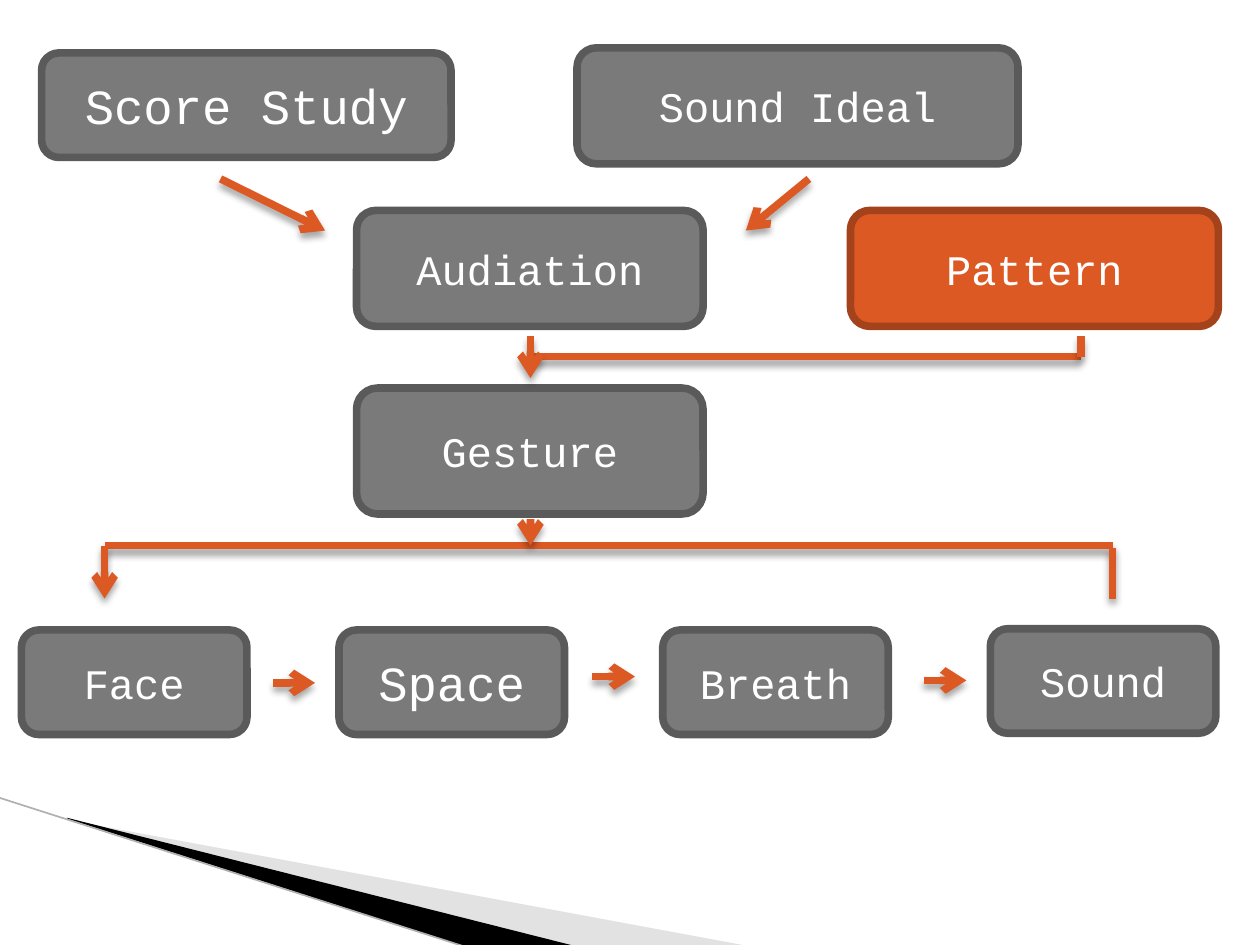
from lxml import etree
from pptx import Presentation
from pptx.dml.color import RGBColor
from pptx.enum.shapes import MSO_CONNECTOR as Link, MSO_SHAPE as Shape
from pptx.enum.text import MSO_ANCHOR as Anchor, PP_ALIGN as Align
from pptx.oxml import parse_xml
from pptx.oxml.ns import nsdecls, qn
from pptx.util import Inches, Pt

GRAY = RGBColor(0x7A, 0x7A, 0x7A)
EDGE = RGBColor(0x5A, 0x5A, 0x5A)
ORANGE = RGBColor(0xDC, 0x59, 0x24)
RUST = RGBColor(0xA3, 0x42, 0x1B)
SILVER = RGBColor(0xB8, 0xB8, 0xB8)
PALE = RGBColor(0xB0, 0xB0, 0xB0)
BLACK = RGBColor(0, 0, 0)
WHITE = RGBColor(0xFF, 0xFF, 0xFF)
FONT = "Courier New"
STROKE = 4.33

# Boxes: text, left, top, width, height, text size
BOXES = [
    ("Score Study", 0.33, 0.42, 3.25, 0.83, 28),
    ("Sound Ideal", 4.58, 0.38, 3.5, 0.92, 24),
    ("Audiation", 2.83, 1.67, 2.75, 0.92, 24),
    ("Pattern", 6.75, 1.67, 2.92, 0.92, 24),
    ("Gesture", 2.83, 3.08, 2.75, 1, 24),
    ("Face", 0.17, 5, 1.79, 0.83, 24),
    ("Space", 2.69, 5, 1.79, 0.83, 28),
    ("Breath", 5.26, 5, 1.79, 0.83, 24),
    ("Sound", 7.86, 4.99, 1.79, 0.83, 24),
]
ACCENT = "Pattern"

# Links: start, end, arrowhead
MID, LEFT, RIGHT, BAR = 4.21, 0.83, 8.83, 4.33
LINKS = [
    ((1.75, 1.42), (2.58, 1.83), True),
    ((6.42, 1.42), (5.92, 1.83), True),
    ((LEFT, BAR), (RIGHT, BAR), False),
    ((LEFT, BAR), (LEFT, 4.75), True),
    ((RIGHT, 4.35), (RIGHT, 4.75), False),
    ((MID, 4.17), (MID, BAR), True),
    ((MID, 2.83), (8.58, 2.83), False),
    ((8.58, 2.83), (8.58, 2.67), False),
    ((MID, 2.67), (MID, 3), True),
    ((2.17, 5.42), (2.5, 5.42), True),
    ((4.7, 5.37), (5.04, 5.37), True),
    ((7.33, 5.4), (7.67, 5.4), True),
]

# Corner wedges: points, colour, opacity in percent
WEDGES = [
    ([(0.55, 6.51), (5.95, 7.51), (4.56, 7.51), (0.55, 6.5)], SILVER, 40),
    ([(0.53, 6.49), (4.57, 7.51), (3.72, 7.52), (0.54, 6.5)], BLACK, 100),
]

SHADOW = (
    f'<a:effectLst {nsdecls("a")}>'
    f'<a:outerShdw blurRad="{Pt(4)}" dist="{Pt(3)}" dir="5400000" rotWithShape="0">'
    '<a:srgbClr val="000000"><a:alpha val="35000"/></a:srgbClr>'
    '</a:outerShdw></a:effectLst>'
)
PLAIN = f'<a:effectLst {nsdecls("a")}/>'


def add_wedge(slide, points, color, opacity):
    pts = [(Inches(x), Inches(y)) for x, y in points]
    pen = slide.shapes.build_freeform(*pts[0], scale=1.0)
    pen.add_line_segments(pts[1:], close=True)
    wedge = pen.convert_to_shape()
    wedge.shadow.inherit = False
    wedge.fill.solid()
    wedge.fill.fore_color.rgb = color
    wedge.line.fill.background()
    if opacity < 100:
        tint = wedge._element.spPr.find(qn("a:solidFill"))[0]
        etree.SubElement(tint, qn("a:alpha"), val=str(opacity * 1000))


def add_link(slide, start, end, color, width, effect, arrow=False):
    ends = [Inches(v) for v in (*start, *end)]
    link = slide.shapes.add_connector(Link.STRAIGHT, *ends)
    link.line.color.rgb = color
    link.line.width = Pt(width)
    props = link._element.spPr
    if arrow:
        etree.SubElement(props.find(qn("a:ln")), qn("a:tailEnd"), type="arrow")
    props.append(parse_xml(effect))


def add_box(slide, text, left, top, width, height, size):
    area = [Inches(v) for v in (left, top, width, height)]
    box = slide.shapes.add_shape(Shape.ROUNDED_RECTANGLE, *area)
    fill, edge = (ORANGE, RUST) if text == ACCENT else (GRAY, EDGE)
    box.shadow.inherit = False
    box.fill.solid()
    box.fill.fore_color.rgb = fill
    box.line.color.rgb = edge
    box.line.width = Pt(STROKE)
    frame = box.text_frame
    frame.text = text
    frame.word_wrap = True
    frame.vertical_anchor = Anchor.MIDDLE
    para = frame.paragraphs[0]
    para.alignment = Align.CENTER
    font = para.runs[0].font
    font.name = FONT
    font.size = Pt(size)
    font.color.rgb = WHITE


def main():
    deck = Presentation()
    deck.slide_width, deck.slide_height = Inches(10), Inches(7.5)
    slide = deck.slides.add_slide(deck.slide_layouts[6])

    # Corner decoration
    for wedge in WEDGES:
        add_wedge(slide, *wedge)
    add_link(slide, (-0.01, 6.33), (3.71, 7.52), PALE, 0.95, PLAIN)

    # Flow chart
    for box in BOXES:
        add_box(slide, *box)
    for start, end, arrow in LINKS:
        add_link(slide, start, end, ORANGE, STROKE, SHADOW, arrow)

    deck.save("out.pptx")


if __name__ == "__main__":
    main()
